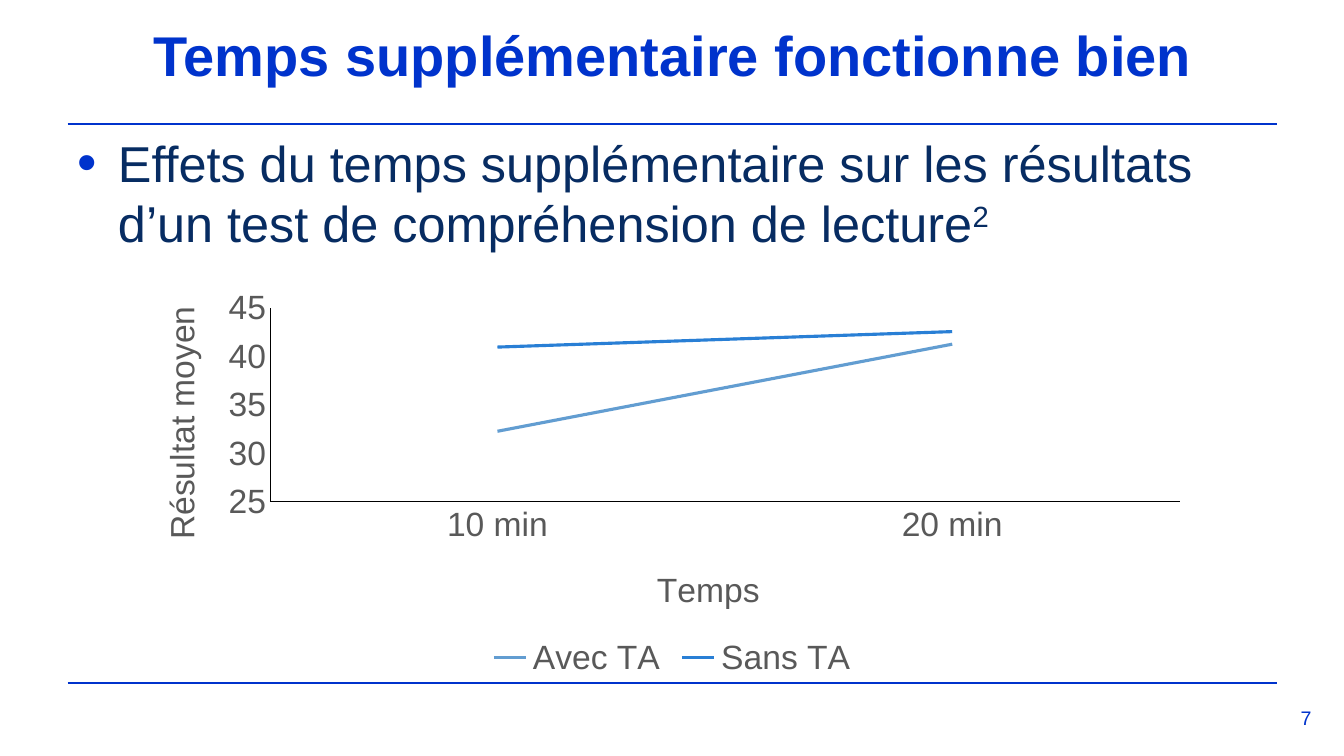
import pptx
import pptx.chart.data
import pptx.dml.color
import pptx.enum.chart
import pptx.enum.shapes
import pptx.enum.text
import pptx.oxml
import pptx.oxml.ns
import pptx.util
from lxml import etree
from pptx.util import Inches

THEME = {
    "font": "Arial", "blue": "0033CC", "navy": "072C62", "grey": "595959", "black": "000000",
    "series": ["629DD1", "297FD5"],
    "title": 40, "body": 36, "chart": 24, "number": 14,
}


def style(font, size, color, bold=False):
    font.name = THEME["font"]
    font.size = pptx.util.Pt(THEME[size])
    font.bold = bold
    font.color.rgb = pptx.dml.color.RGBColor.from_string(THEME[color])


def place(element, **fractions):
    """Give a chart part a manual layout, in fractions of the chart."""
    layout = element.find(pptx.oxml.ns.qn("c:layout"))
    if layout is None:
        layout = etree.Element(pptx.oxml.ns.qn("c:layout"))
        text = element.find(pptx.oxml.ns.qn("c:tx"))
        element.insert(0 if text is None else 1, layout)
    manual = etree.SubElement(layout, pptx.oxml.ns.qn("c:manualLayout"))
    settings = {"xMode": "edge", "yMode": "edge", **fractions}
    for name, value in settings.items():
        etree.SubElement(manual, pptx.oxml.ns.qn(f"c:{name}"), val=str(value))


deck = pptx.Presentation()
deck.slide_width, deck.slide_height = Inches(13.33), Inches(7.5)
page = deck.slides.add_slide(deck.slide_layouts[1])

# Rules above and below the content
for y in (6.78, 1.23):
    rule = page.shapes.add_connector(
        pptx.enum.shapes.MSO_CONNECTOR.STRAIGHT, Inches(0.67), Inches(y), Inches(12.67), Inches(y))
    rule.line.color.rgb = pptx.dml.color.RGBColor.from_string(THEME["blue"])
    rule.line.width = pptx.util.Pt(1.5)
    etree.SubElement(rule._element.spPr, pptx.oxml.ns.qn("a:effectLst"))

# Title
title = page.shapes.title
title.left, title.top, title.width, title.height = map(Inches, (0.67, 0.17, 12, 0.75))
title.text_frame.text = "Temps supplémentaire fonctionne bien"
title.text_frame.auto_size = pptx.enum.text.MSO_AUTO_SIZE.NONE
title.text_frame.vertical_anchor = pptx.enum.text.MSO_ANCHOR.BOTTOM
para = title.text_frame.paragraphs[0]
para.alignment = pptx.enum.text.PP_ALIGN.CENTER
style(para.runs[0].font, "title", "blue", bold=True)

# Bullet with its reference mark
body = page.placeholders[1]
body.left, body.top, body.width, body.height = map(Inches, (0.67, 1.26, 12, 5.35))
body.text_frame.auto_size = pptx.enum.text.MSO_AUTO_SIZE.NONE
para = body.text_frame.paragraphs[0]
para.text = "Effets du temps supplémentaire sur les résultats d’un test de compréhension de lecture"
mark = para.add_run()
mark.text = "2"
properties = para._p.get_or_add_pPr()
properties.set("marL", str(Inches(0.4)))
properties.set("indent", str(Inches(-0.4)))
bullet_color = etree.SubElement(properties, pptx.oxml.ns.qn("a:buClr"))
etree.SubElement(bullet_color, pptx.oxml.ns.qn("a:srgbClr"), val=THEME["blue"])
etree.SubElement(properties, pptx.oxml.ns.qn("a:buSzPct"), val="110000")
etree.SubElement(properties, pptx.oxml.ns.qn("a:buFont"), typeface=THEME["font"])
etree.SubElement(properties, pptx.oxml.ns.qn("a:buChar"), char="•")
para.space_before = pptx.util.Pt(0)
for span in para.runs:
    style(span.font, "body", "navy")
mark.font._element.set("baseline", "30000")

# Slide number
number = page.shapes.add_textbox(*map(Inches, (12.58, 6.95, 0.75, 0.42)))
number.text_frame.word_wrap = True
number.text_frame.text = "7"
para = number.text_frame.paragraphs[0]
para.alignment = pptx.enum.text.PP_ALIGN.CENTER
style(para.runs[0].font, "number", "blue")

# Line chart
scores = pptx.chart.data.CategoryChartData()
scores.categories = ["10 min", "20 min"]
scores.add_series("Avec TA", (32.3, 41.3))
scores.add_series("Sans TA", (41, 42.6))
chart = page.shapes.add_chart(
    pptx.enum.chart.XL_CHART_TYPE.LINE, *map(Inches, (1.42, 2.78, 10.49, 4)), scores).chart
chart.has_title = False
style(chart.font, "chart", "grey")
chart.plots[0].vary_by_categories = False
for series, color in zip(chart.plots[0].series, THEME["series"]):
    series.smooth = False
    series.format.line.width = pptx.util.Pt(2.25)
    series.format.line.color.rgb = pptx.dml.color.RGBColor.from_string(color)
    series.marker.style = pptx.enum.chart.XL_MARKER_STYLE.NONE

# Axes and their titles
axes = [(chart.category_axis, "Temps", 0.48, 0.7), (chart.value_axis, "Résultat moyen", 0.01, 0.05)]
for axis, label, x, y in axes:
    axis.has_major_gridlines = False
    axis.major_tick_mark = pptx.enum.chart.XL_TICK_MARK.NONE
    axis.minor_tick_mark = pptx.enum.chart.XL_TICK_MARK.NONE
    axis.format.line.width = pptx.util.Pt(0.75)
    axis.format.line.color.rgb = pptx.dml.color.RGBColor.from_string(THEME["black"])
    style(axis.tick_labels.font, "chart", "grey")
    frame = axis.axis_title.text_frame
    frame.text = label
    style(frame.paragraphs[0].runs[0].font, "chart", "grey")
    place(axis.axis_title._element, x=x, y=y)
frame._txBody.bodyPr.set("rot", "-5400000")
frame._txBody.bodyPr.set("vert", "horz")
chart.value_axis.minimum_scale = 25
chart.value_axis.maximum_scale = 45
chart.value_axis.major_unit = 5
place(chart._chartSpace.chart.plotArea,
      layoutTarget="inner", x=0.12, y=0.07, w=0.86, h=0.48)
# The schema wants the layout target ahead of the modes
manual = chart._chartSpace.chart.plotArea.find(".//" + pptx.oxml.ns.qn("c:manualLayout"))
manual.insert(0, manual.find(pptx.oxml.ns.qn("c:layoutTarget")))

# Legend
chart.has_legend = True
chart.legend.position = pptx.enum.chart.XL_LEGEND_POSITION.BOTTOM
chart.legend.include_in_layout = False
style(chart.legend.font, "chart", "grey")

deck.save("out.pptx")
